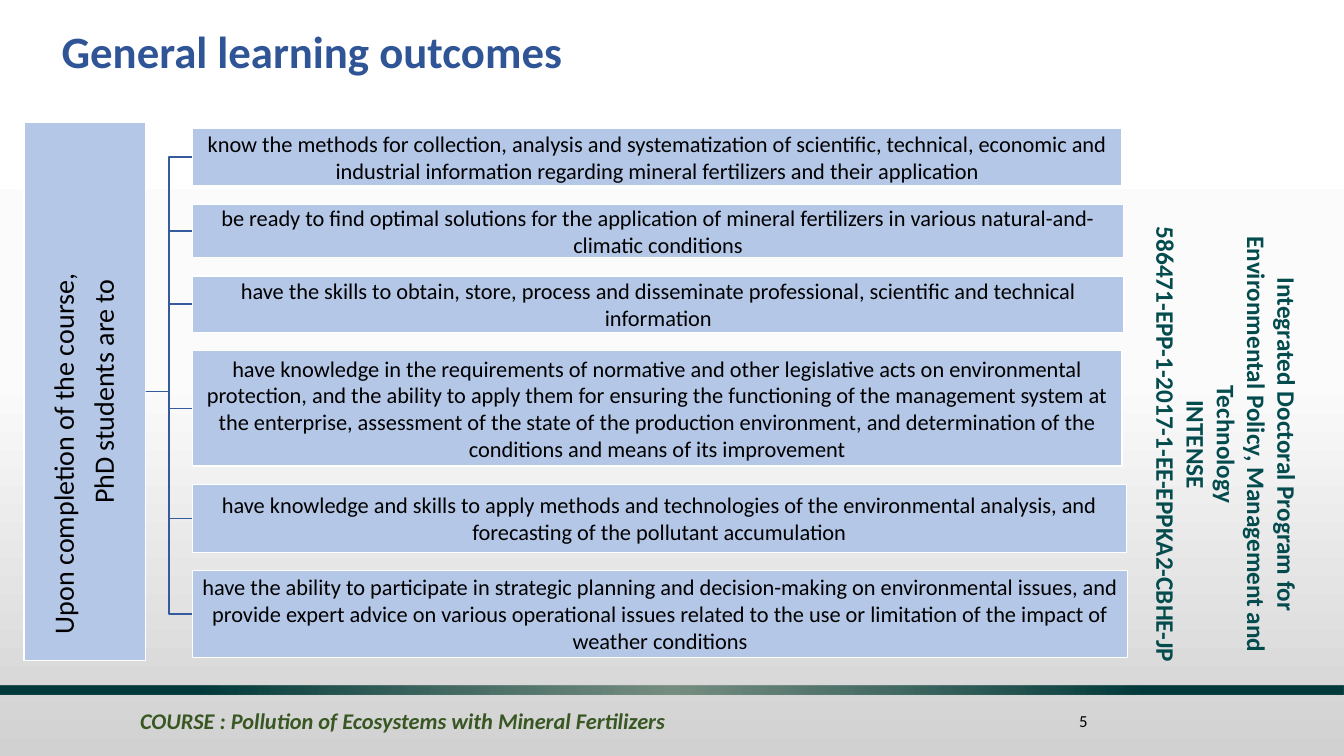
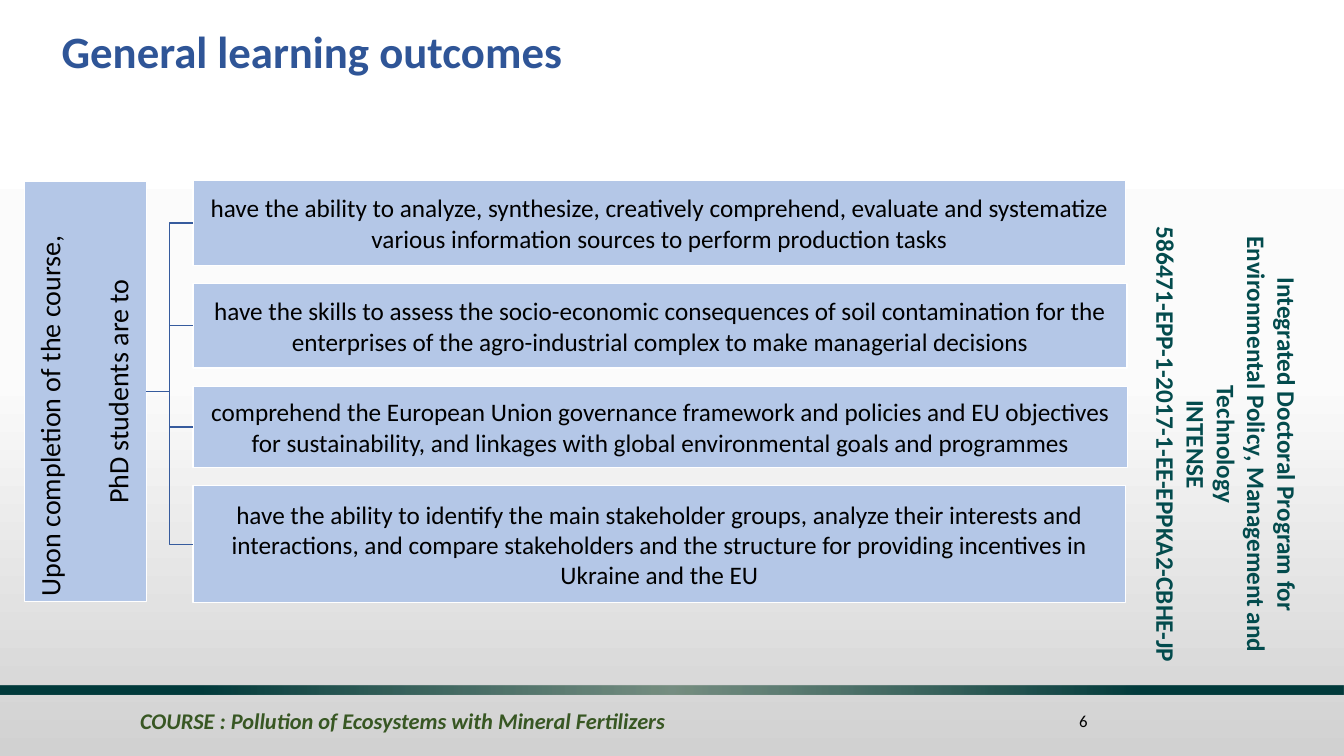
from dataclasses import dataclass

from lxml.etree import SubElement
from pptx import Presentation
from pptx.dml.color import RGBColor
from pptx.enum.shapes import MSO_CONNECTOR, MSO_SHAPE
from pptx.enum.text import MSO_ANCHOR, PP_ALIGN
from pptx.oxml.ns import qn
from pptx.util import Pt

COLORS = {
    "title": "2F5597",
    "course": "385723",
    "project": "034B4D",
    "text": "000000",
    "box": "B4C7E7",
    "border": "FFFFFF",
    "branch": "365B9D",
    "bg_top": "FFFFFF",
    "bg_middle": "FBFBFB",
    "bg_bottom": "D1D1D1",
    "band_center": "668273",
    "band_edge": "023B3C",
}
FONT = "Calibri"
SLIDE_W, SLIDE_H = 960, 540
ROOT_W = 87
ROOT_MIDDLE = 279.75
BRANCH_W = 33.5
BOX_GAP = 13
BOX_INSET = 1

PROJECT = (
    "Integrated Doctoral Program for Environmental Policy, Management and Technology\n"
    "INTENSE\n"
    "586471-EPP-1-2017-1-EE-EPPKA2-CBHE-JP"
)
COURSE = "COURSE : Pollution of Ecosystems with Mineral Fertilizers"
TITLE = "General learning outcomes"
ROOT_TEXT = "Upon completion of the course,\nPhD students are to"


@dataclass(frozen=True)
class Style:
    size: float
    color: str = "text"
    bold: bool = False
    italic: bool = False
    align: PP_ALIGN = PP_ALIGN.LEFT
    anchor: MSO_ANCHOR = MSO_ANCHOR.MIDDLE


@dataclass(frozen=True)
class Outcome:
    width: float
    height: float
    text: str


@dataclass(frozen=True)
class Tree:
    number: int
    left: float
    top: float
    root_height: float
    root_indent: float
    root_spacing: float
    size: float
    outcomes: tuple[Outcome, ...]


TREES = (
    Tree(5, 17, 91.5, 384.5, 18, 7, 16, (
        Outcome(664, 41.5, "know the methods for collection, analysis and systematization of scientific, "
                "technical, economic and industrial information regarding mineral fertilizers and "
                "their application"),
        Outcome(665, 38, "be ready to find optimal solutions for the application of mineral fertilizers "
                "in various natural-and-climatic conditions"),
        Outcome(665.5, 40.5, "have the skills to obtain, store, process and disseminate professional, "
                "scientific and technical information"),
        Outcome(664, 82.5, "have knowledge in the requirements of normative and other legislative acts on "
                "environmental protection, and the ability to apply them for ensuring the functioning "
                "of the management system at the enterprise, assessment of the state of the production "
                "environment, and determination of the conditions and means of its improvement"),
        Outcome(667, 48.5, "have knowledge and skills to apply methods and technologies of the "
                "environmental analysis, and forecasting of the pollutant accumulation"),
        Outcome(668, 62, "have the ability to participate in strategic planning and decision-making on "
                "environmental issues, and provide expert advice on various operational issues related "
                "to the use or limitation of the impact of weather conditions"),
    )),
    Tree(6, 17.5, 129, 300, 3, 27, 18, (
        Outcome(666, 60.5, "have the ability to analyze, synthesize, creatively comprehend, evaluate and "
                "systematize various information sources to perform production tasks"),
        Outcome(667, 60.5, "have the skills to assess the socio-economic consequences of soil "
                "contamination for the enterprises of the agro-industrial complex to make managerial "
                "decisions"),
        Outcome(667.5, 58, "comprehend the European Union governance framework and policies and EU "
                "objectives for sustainability, and linkages with global environmental goals and "
                "programmes"),
        Outcome(666, 83.5, "have the ability to identify the main stakeholder groups, analyze their "
                "interests and interactions, and compare stakeholders and the structure for providing "
                "incentives in Ukraine and the EU"),
    )),
)


def rgb(name: str) -> RGBColor:
    return RGBColor.from_string(COLORS[name])


def write(sp, text: str, style: Style) -> None:
    tf = sp.text_frame
    tf.word_wrap = True
    tf.vertical_anchor = style.anchor
    tf.text = text
    for p in tf.paragraphs:
        p.alignment = style.align
        for r in p.runs:
            r.font.name = FONT
            r.font.size = Pt(style.size)
            r.font.bold = style.bold
            r.font.italic = style.italic
            r.font.color.rgb = rgb(style.color)


def add_text(slide, left: float, top: float, width: float, height: float, text: str, style: Style):
    sp = slide.shapes.add_textbox(Pt(left), Pt(top), Pt(width), Pt(height))
    write(sp, text, style)
    return sp


def add_box(slide, left: float, top: float, width: float, height: float, text: str, size: float):
    sp = slide.shapes.add_shape(MSO_SHAPE.RECTANGLE, Pt(left), Pt(top), Pt(width), Pt(height))
    sp.shadow.inherit = False
    sp.fill.solid()
    sp.fill.fore_color.rgb = rgb("box")
    sp.line.color.rgb = rgb("border")
    sp.line.width = Pt(1)
    tf = sp.text_frame
    tf.margin_left = tf.margin_right = tf.margin_top = tf.margin_bottom = Pt(BOX_INSET)
    write(sp, text, Style(size, align=PP_ALIGN.CENTER))
    return sp


def add_branch(slide, root, box) -> None:
    line = slide.shapes.add_connector(MSO_CONNECTOR.ELBOW, 0, 0, 0, 0)
    line.begin_connect(root, 3)
    line.end_connect(box, 1)
    line.line.color.rgb = rgb("branch")
    line.line.width = Pt(1)
    SubElement(line.element.spPr, qn("a:effectLst"))


def set_stops(element, stops: tuple[tuple[int, str, int], ...]):
    """Replace the gradient with (position, colour, opacity) stops, all but colour in percent."""
    grad = element.find(".//" + qn("a:gradFill"))
    grad.clear()
    stop_list = SubElement(grad, qn("a:gsLst"))
    for position, color, opacity in stops:
        stop = SubElement(stop_list, qn("a:gs"), pos=str(position * 1000))
        clr = SubElement(stop, qn("a:srgbClr"), val=COLORS[color])
        if opacity < 100:
            SubElement(clr, qn("a:alpha"), val=str(opacity * 1000))
    return grad


def build_layout(layout, slide) -> None:
    """Give the layout its background, band and project text, drawn by way of the slide."""
    for placeholder in list(layout.placeholders):
        layout.shapes.element.remove(placeholder.element)

    layout.background.fill.gradient()
    grad = set_stops(layout.element, ((0, "bg_top", 100), (50, "bg_middle", 100), (100, "bg_bottom", 100)))
    SubElement(grad, qn("a:lin"), ang="5400000", scaled="0")

    band = slide.shapes.add_shape(MSO_SHAPE.RECTANGLE, 0, Pt(490), Pt(SLIDE_W), Pt(6))
    band.shadow.inherit = False
    band.line.fill.background()
    band.fill.gradient()
    grad = set_stops(band.element, ((0, "band_center", 85), (70, "band_edge", 100)))
    circle = SubElement(grad, qn("a:path"), path="circle")
    SubElement(circle, qn("a:fillToRect"), l="50000", t="50000", r="50000", b="50000")

    project = add_text(slide, 702, 259, 347, 117, PROJECT,
                       Style(18, "project", bold=True, align=PP_ALIGN.CENTER, anchor=MSO_ANCHOR.TOP))
    project.rotation = 90

    for sp in (band, project):
        layout.shapes.element.append(sp.element)


def add_root(slide, tree: Tree):
    sp = add_box(slide, tree.left, ROOT_MIDDLE - tree.root_height / 2, ROOT_W, tree.root_height,
                 ROOT_TEXT, 20)
    sp.text_frame._txBody.bodyPr.set("vert", "vert270")
    for p in sp.text_frame.paragraphs:
        p.line_spacing = 0.9
    first = sp.text_frame.paragraphs[0]
    first.alignment = PP_ALIGN.LEFT
    first.space_after = Pt(tree.root_spacing)
    first._p.get_or_add_pPr().set("marL", str(Pt(tree.root_indent)))
    return sp


def build_slide(slide, tree: Tree) -> None:
    title = add_text(slide, 37, 12, 714, 47.5, TITLE,
                     Style(32, "title", bold=True, anchor=MSO_ANCHOR.BOTTOM))
    title.text_frame.paragraphs[0].line_spacing = 0.9
    add_text(slide, 735, 500.5, 49, 29, str(tree.number), Style(12, align=PP_ALIGN.RIGHT))
    add_text(slide, 93, 496, 797, 37, COURSE, Style(16, "course", bold=True, italic=True))

    root = add_root(slide, tree)
    left = tree.left + ROOT_W + BRANCH_W
    top = tree.top
    for outcome in tree.outcomes:
        box = add_box(slide, left, top, outcome.width, outcome.height, outcome.text, tree.size)
        add_branch(slide, root, box)
        top += outcome.height + BOX_GAP


def main() -> None:
    prs = Presentation()
    prs.slide_width, prs.slide_height = Pt(SLIDE_W), Pt(SLIDE_H)
    blank = prs.slide_layouts[6]
    slides = [prs.slides.add_slide(blank) for _ in TREES]
    build_layout(blank, slides[0])
    for slide, tree in zip(slides, TREES):
        build_slide(slide, tree)
    prs.save("out.pptx")


if __name__ == "__main__":
    main()
